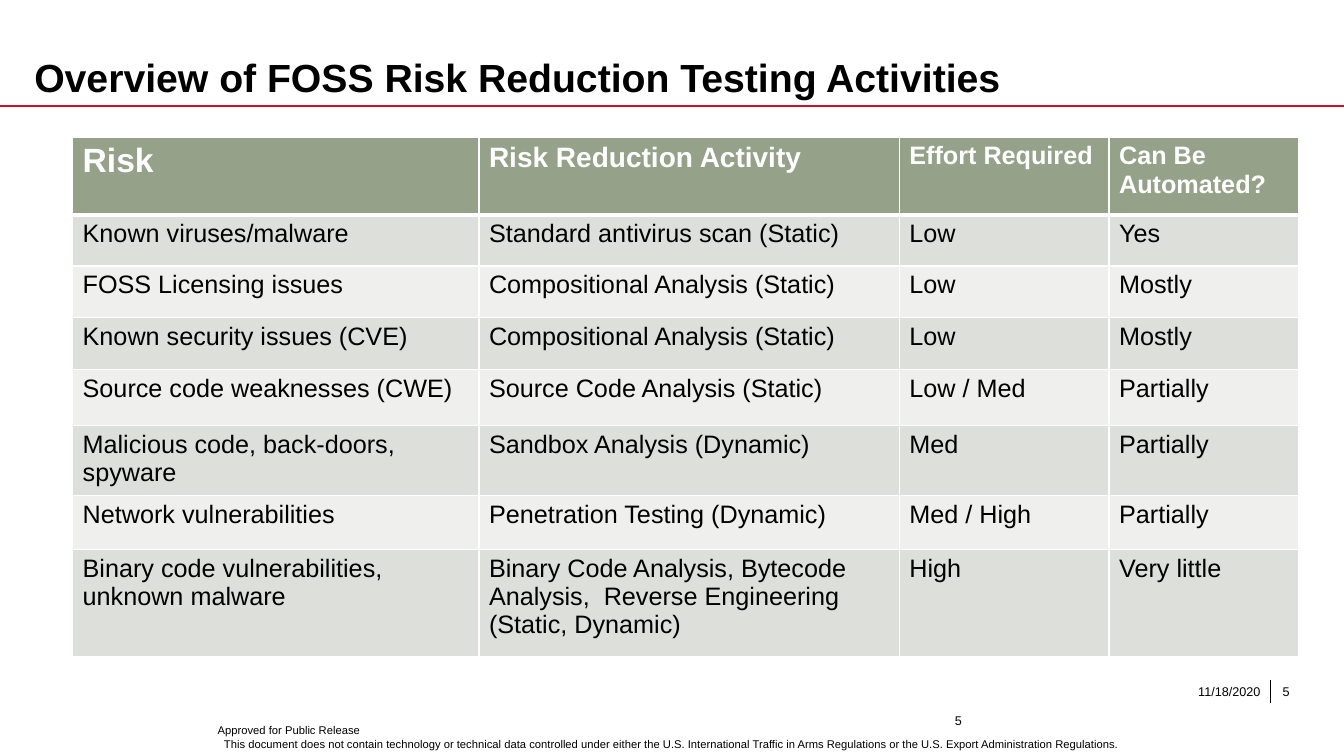
from lxml.etree import SubElement
from pptx import Presentation
from pptx.dml.color import RGBColor
from pptx.enum.shapes import MSO_CONNECTOR
from pptx.enum.text import MSO_ANCHOR as Anchor, PP_ALIGN as Align
from pptx.oxml.ns import qn
from pptx.util import Inches, Pt

BLACK = RGBColor(0x00, 0x00, 0x00)
WHITE = RGBColor(0xFF, 0xFF, 0xFF)
RED = RGBColor(0xCE, 0x11, 0x26)
HEADER_GREEN = RGBColor(0x95, 0xA2, 0x89)
BANDS = (RGBColor(0xDD, 0xE0, 0xDA), RGBColor(0xEF, 0xF0, 0xED))

SLIDE_WIDTH, SLIDE_HEIGHT = 13.33, 7.5
COLUMN_WIDTHS = (4.03, 4.17, 2.08, 1.88)
ROW_HEIGHTS = (0.77, 0.51, 0.51, 0.52, 0.55, 0.66, 0.53, 1.06)
HEADER_SIZES = (24, 20, 18, 18)
BODY_SIZE = 18
ACTIVITIES = (
    ("Risk", "Risk Reduction Activity", "Effort Required", "Can Be Automated?"),
    ("Known viruses/malware", "Standard antivirus scan (Static)", "Low", "Yes"),
    ("FOSS Licensing issues", "Compositional Analysis (Static)", "Low", "Mostly"),
    ("Known security issues (CVE)", "Compositional Analysis (Static)", "Low", "Mostly"),
    ("Source code weaknesses (CWE)", "Source Code Analysis (Static)", "Low / Med", "Partially"),
    ("Malicious code, back-doors, spyware", "Sandbox Analysis (Dynamic)", "Med", "Partially"),
    ("Network vulnerabilities", "Penetration Testing (Dynamic)", "Med / High", "Partially"),
    ("Binary code vulnerabilities,\nunknown malware",
     "Binary Code Analysis, Bytecode Analysis,  Reverse Engineering (Static, Dynamic)",
     "High", "Very little"),
)


def set_font(paragraph, size, color=BLACK, bold=False):
    font = paragraph.font
    font.name, font.size, font.bold = "Arial", Pt(size), bold
    font.color.rgb = color


def add_text(slide, box, text, size, bold=False, anchor=Anchor.MIDDLE,
             align=Align.LEFT, insets=(0, 0.05, 0, 0.05)):
    frame = slide.shapes.add_textbox(*map(Inches, box)).text_frame
    frame.word_wrap = True
    frame.vertical_anchor = anchor
    (frame.margin_left, frame.margin_top,
     frame.margin_right, frame.margin_bottom) = map(Inches, insets)
    frame.text = text
    for paragraph in frame.paragraphs:
        paragraph.alignment = align
        set_font(paragraph, size, bold=bold)
    return frame


def add_rule(slide, ends, color, width):
    rule = slide.shapes.add_connector(MSO_CONNECTOR.STRAIGHT, *map(Inches, ends))
    rule.line.color.rgb = color
    rule.line.width = Pt(width)
    SubElement(rule._element.spPr, qn("a:effectLst"))


def set_borders(cell, top, bottom):
    properties = cell._tc.get_or_add_tcPr()
    for side, width in (("L", 1), ("R", 1), ("T", top), ("B", bottom)):
        border = SubElement(properties, qn(f"a:ln{side}"), w=str(Pt(width)))
        fill = SubElement(border, qn("a:solidFill"))
        SubElement(fill, qn("a:srgbClr"), val=str(WHITE))


def add_heading(slide, left, top, width, height):
    heading = add_text(slide, (left, top, width, height),
                       "Overview of FOSS Risk Reduction Testing Activities", 28,
                       bold=True, anchor=Anchor.BOTTOM, insets=(0, 0, 0, 0))
    heading.paragraphs[0].line_spacing = Pt(29)
    rule_y = top + height + 0.05
    add_rule(slide, (SLIDE_WIDTH, rule_y, 0, rule_y), RED, 1)


def add_activity_table(slide, left, top):
    box = (left, top, sum(COLUMN_WIDTHS), sum(ROW_HEIGHTS))
    table = slide.shapes.add_table(len(ROW_HEIGHTS), len(COLUMN_WIDTHS),
                                   *map(Inches, box)).table
    for column, width in zip(table.columns, COLUMN_WIDTHS):
        column.width = Inches(width)
    for r, (height, entries) in enumerate(zip(ROW_HEIGHTS, ACTIVITIES)):
        table.rows[r].height = Inches(height)
        is_header = r == 0
        for c, entry in enumerate(entries):
            cell = table.cell(r, c)
            cell.text = entry
            set_borders(cell, top=3 if r == 1 else 1, bottom=3 if is_header else 1)
            cell.fill.solid()
            cell.fill.fore_color.rgb = HEADER_GREEN if is_header else BANDS[(r - 1) % 2]
            for paragraph in cell.text_frame.paragraphs:
                if is_header:
                    set_font(paragraph, HEADER_SIZES[c], WHITE, bold=True)
                else:
                    set_font(paragraph, BODY_SIZE)


def add_footer(slide, left, top, right):
    # Date and page number, with a divider between them
    divider_x, height = right - 0.57, 0.22
    add_rule(slide, (divider_x, top, divider_x, top + height), BLACK, 0.25)
    add_text(slide, (divider_x - 3.21, top, 3.11, height), "11/18/2020", 9,
             align=Align.RIGHT, insets=(0.1, 0.05, 0, 0.05))
    add_text(slide, (divider_x + 0.12, top, 0.45, height), "5", 9)
    add_text(slide, (divider_x - 3.13, top + 0.2, 0.46, 0.4), "5", 9)

    # Release statement
    release = add_text(
        slide, (left, top + 0.38, 9.21, 0.37),
        "Approved for Public Release\n"
        "This document does not contain technology or technical data controlled under "
        "either the U.S. International Traffic in Arms Regulations or the U.S. Export "
        "Administration Regulations.",
        8, anchor=Anchor.TOP, insets=(0.1, 0.05, 0.1, 0.05))
    release.paragraphs[1].alignment = Align.CENTER


def main():
    deck = Presentation()
    deck.slide_width, deck.slide_height = Inches(SLIDE_WIDTH), Inches(SLIDE_HEIGHT)
    slide = deck.slides.add_slide(deck.slide_layouts[6])
    add_heading(slide, 0.34, 0.29, 10.1, 0.71)
    add_activity_table(slide, 0.72, 1.36)
    add_footer(slide, 2.06, 6.75, 13.17)
    deck.save("out.pptx")


if __name__ == "__main__":
    main()
